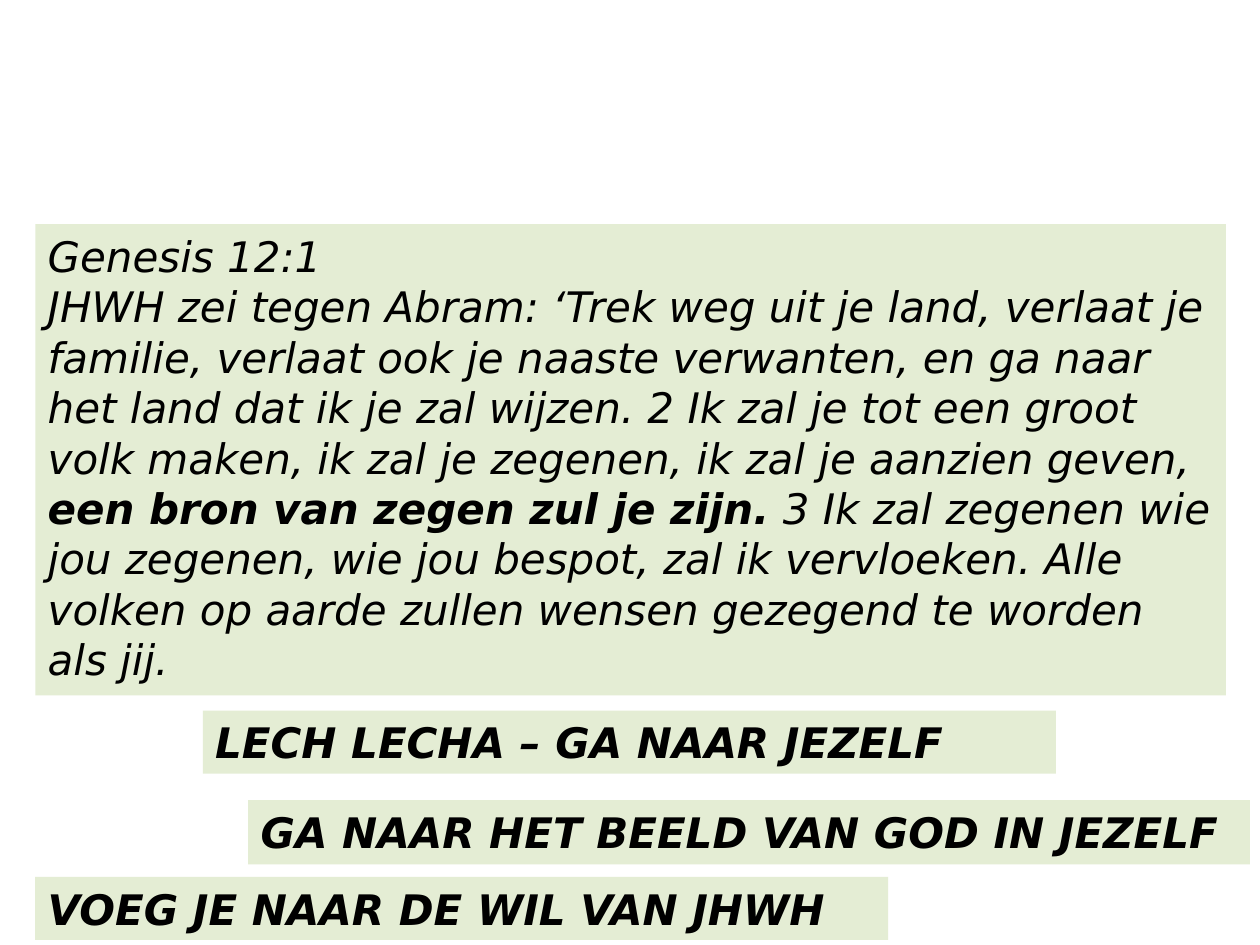
from lxml import etree
from pptx import Presentation, util as u
from pptx.dml import color
from pptx.enum import text
from pptx.oxml import ns

FONT = "DejaVu Sans"
SIZE = 24
GREEN = "D7E4BD"
BLACK = "000000"
OPACITY = 65

VERSE = [
    [("Genesis 12:1", False)],
    [
        ("JHWH zei tegen Abram: ‘Trek weg uit je land, verlaat je familie, "
         "verlaat ook je naaste verwanten, en ga naar het land dat ik je zal "
         "wijzen. 2 Ik zal je tot een groot volk maken, ik zal je zegenen, "
         "ik zal je aanzien geven, ", False),
        ("een bron van zegen zul je zijn.", True),
        (" 3 Ik zal zegenen wie jou zegenen, wie jou bespot, zal ik "
         "vervloeken. Alle volken op aarde zullen wensen gezegend te worden "
         "als jij.", False),
    ],
]
VERSE_BOX = (0.28, 1.78, 9.45, 3.74)

MOTTOS = [
    ("VOEG JE NAAR DE WIL VAN JHWH", (0.28, 6.96, 6.77, 0.5)),
    ("GA NAAR HET BEELD VAN GOD IN JEZELF", (1.97, 6.35, 7.95, 0.51)),
    ("LECH LECHA – GA NAAR JEZELF", (1.61, 5.64, 6.77, 0.5)),
]


def paint(fill, hex_color):
    fill.solid()
    fill.fore_color.rgb = color.RGBColor.from_string(hex_color)


def add_panel(slide, box, paragraphs):
    panel = slide.shapes.add_textbox(*(u.Inches(side) for side in box))
    paint(panel.fill, GREEN)
    tint = panel._element.spPr.find(".//" + ns.qn("a:srgbClr"))
    etree.SubElement(tint, ns.qn("a:alpha"), val=str(OPACITY * 1000))

    frame = panel.text_frame
    frame.word_wrap = True
    frame.auto_size = text.MSO_AUTO_SIZE.SHAPE_TO_FIT_TEXT
    for index, phrases in enumerate(paragraphs):
        paragraph = frame.add_paragraph() if index else frame.paragraphs[0]
        for wording, bold in phrases:
            run = paragraph.add_run()
            run.text = wording
            run.font.name = FONT
            run.font.size = u.Pt(SIZE)
            run.font.italic = True
            run.font.bold = bold
            paint(run.font.fill, BLACK)


def main():
    deck = Presentation()
    deck.slide_width, deck.slide_height = u.Inches(10), u.Inches(7.5)
    slide = deck.slides.add_slide(deck.slide_layouts[6])
    add_panel(slide, VERSE_BOX, VERSE)
    for motto, box in MOTTOS:
        add_panel(slide, box, [[(motto, True)]])
    deck.save("out.pptx")


if __name__ == "__main__":
    main()
